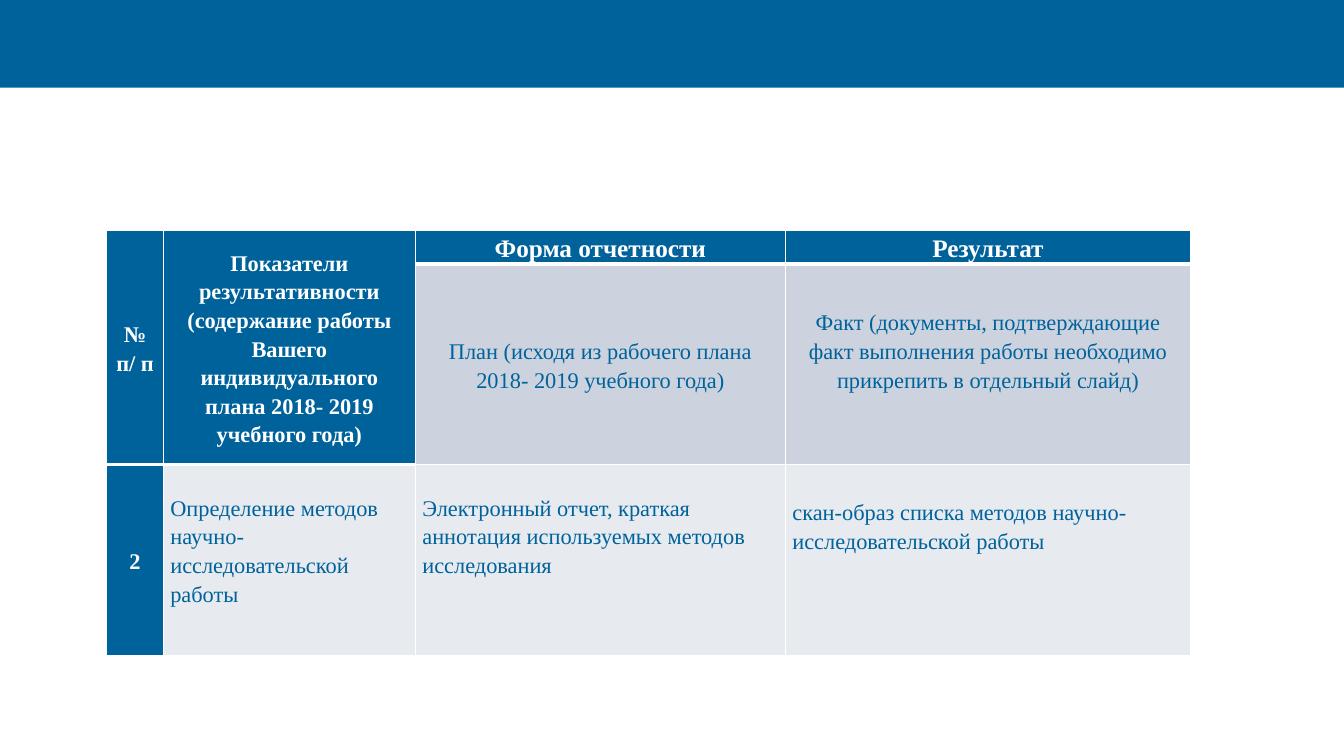
from dataclasses import dataclass

from lxml.etree import SubElement
from pptx import Presentation
from pptx.dml.color import RGBColor
from pptx.enum.shapes import MSO_SHAPE
from pptx.enum.text import MSO_ANCHOR, PP_ALIGN
from pptx.oxml.ns import qn
from pptx.table import _Cell
from pptx.util import Inches, Pt

BLUE, WHITE, PLAN, ENTRY = "00629B", "FFFFFF", "CCD3DE", "E7EAEF"
COLUMN_WIDTHS = (0.56, 2.5, 3.67, 4.02)
ROW_HEIGHTS = (0.33, 1.97, 1.9)


@dataclass(frozen=True)
class CellSpec:
    row: int
    col: int
    paragraphs: tuple[str, ...]
    fill: str = BLUE
    size: int = 16
    centered: bool = True
    middle: bool = True
    top: float = 0
    bottom: float = 0
    rows: int = 1


CELLS = (
    CellSpec(0, 0, ("№ п/ п",), rows=2),
    CellSpec(0, 1, ("Показатели результативности",
                    "(содержание работы Вашего индивидуального плана 2018- 2019 учебного года)"), rows=2),
    CellSpec(0, 2, ("Форма отчетности",), size=18, middle=False),
    CellSpec(0, 3, ("Результат",), size=18, middle=False),
    CellSpec(1, 2, ("План (исходя из рабочего плана 2018- 2019 учебного года)",), PLAN),
    CellSpec(1, 3, ("Факт (документы, подтверждающие факт выполнения работы "
                    "необходимо прикрепить в отдельный слайд)",), PLAN, bottom=0.28),
    CellSpec(2, 0, ("2",)),
    CellSpec(2, 1, ("Определение методов научно-исследовательской работы",),
             ENTRY, centered=False, middle=False, top=0.28),
    CellSpec(2, 2, ("Электронный отчет, краткая аннотация используемых методов исследования",),
             ENTRY, centered=False, middle=False, top=0.28),
    CellSpec(2, 3, ("скан-образ списка методов научно-исследовательской работы",),
             ENTRY, centered=False, middle=False, top=0.32),
)


def rgb(value: str) -> RGBColor:
    return RGBColor.from_string(value)


def set_borders(cell: _Cell, bottom: int) -> None:
    tcPr = cell._tc.get_or_add_tcPr()
    for side, width in (("L", 1), ("R", 1), ("T", 1), ("B", bottom)):
        ln = SubElement(tcPr, qn(f"a:ln{side}"), w=str(Pt(width)))
        SubElement(SubElement(ln, qn("a:solidFill")), qn("a:srgbClr"), val=WHITE)


def fill_cell(cell: _Cell, spec: CellSpec) -> None:
    heading = spec.fill == BLUE
    cell.margin_left = cell.margin_right = Inches(0.07)
    cell.margin_top, cell.margin_bottom = Inches(spec.top), Inches(spec.bottom)
    cell.vertical_anchor = MSO_ANCHOR.MIDDLE if spec.middle else MSO_ANCHOR.TOP
    tf = cell.text_frame
    for index, text in enumerate(spec.paragraphs):
        p = tf.add_paragraph() if index else tf.paragraphs[0]
        p.alignment = PP_ALIGN.CENTER if spec.centered else PP_ALIGN.LEFT
        p.line_spacing = 1.15
        r = p.add_run()
        r.text = text
        r.font.name = "Times New Roman"
        r.font.size = Pt(spec.size)
        r.font.bold = heading
        r.font.color.rgb = rgb(WHITE if heading else BLUE)


def main() -> None:
    prs = Presentation()
    prs.slide_width, prs.slide_height = Inches(13.33), Inches(7.5)
    s = prs.slides.add_slide(prs.slide_layouts[6])

    bar = s.shapes.add_shape(MSO_SHAPE.RECTANGLE, 0, 0, prs.slide_width, Inches(0.87))
    bar.shadow.inherit = False
    bar.fill.solid()
    bar.fill.fore_color.rgb = rgb(BLUE)
    bar.line.fill.background()

    table = s.shapes.add_table(
        len(ROW_HEIGHTS), len(COLUMN_WIDTHS), Inches(1.06), Inches(2.29),
        Inches(sum(COLUMN_WIDTHS)), Inches(sum(ROW_HEIGHTS))).table
    for column, width in zip(table.columns, COLUMN_WIDTHS):
        column.width = Inches(width)
    for row, height in zip(table.rows, ROW_HEIGHTS):
        row.height = Inches(height)

    for spec in CELLS:
        cell = table.cell(spec.row, spec.col)
        if spec.rows > 1:
            cell.merge(table.cell(spec.row + spec.rows - 1, spec.col))
        for offset in range(spec.rows):
            part = table.cell(spec.row + offset, spec.col)
            set_borders(part, 3 if spec.row == 0 else 1)
            part.fill.solid()
            part.fill.fore_color.rgb = rgb(spec.fill)
        fill_cell(cell, spec)

    prs.save("out.pptx")


if __name__ == "__main__":
    main()
